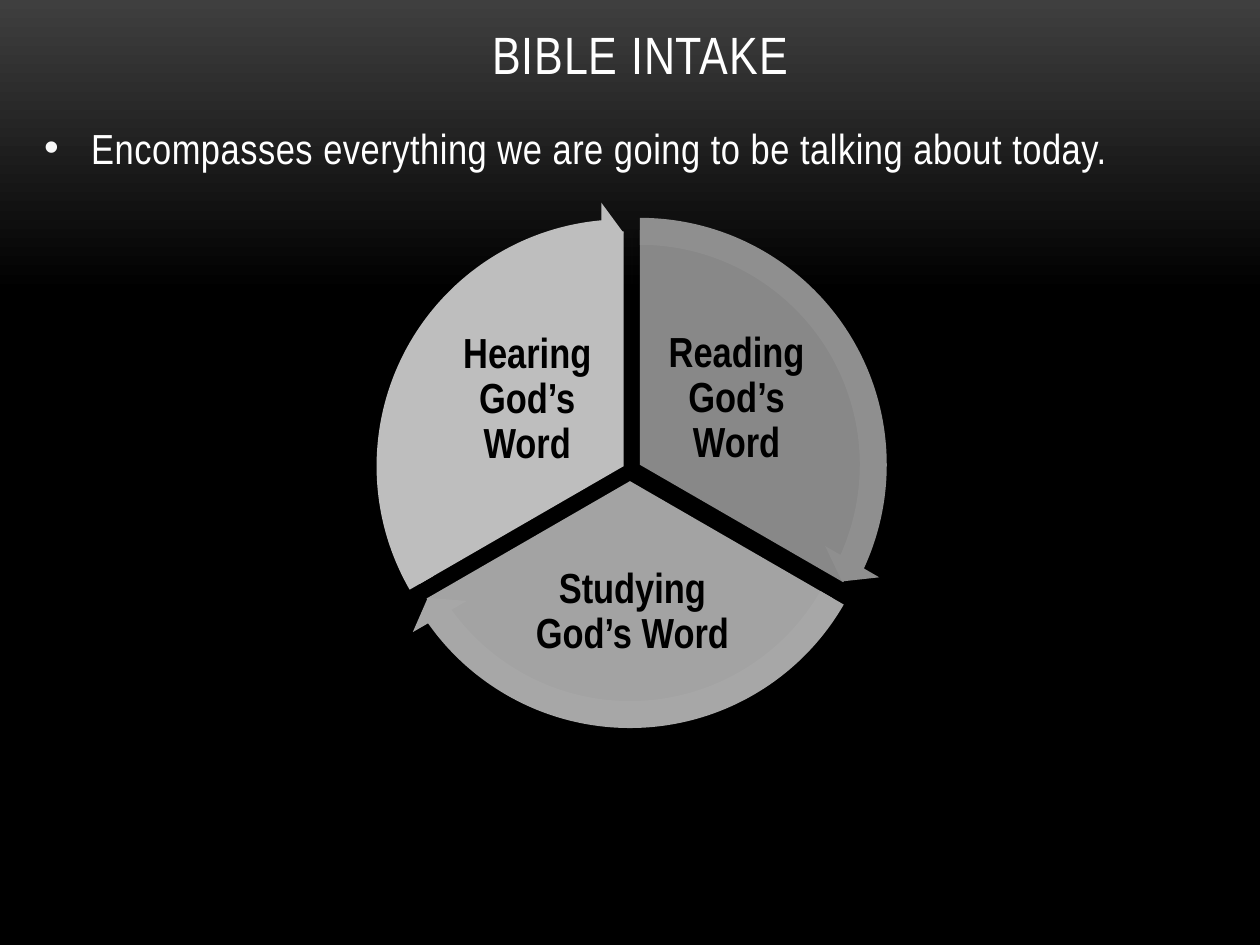
from dataclasses import dataclass

import lxml.etree
import pptx
import pptx.dml.color
import pptx.enum.shapes
import pptx.enum.text
import pptx.oxml
import pptx.oxml.ns
import pptx.util
from pptx.util import Cm

ALIGN = pptx.enum.text.PP_ALIGN
ANCHOR = pptx.enum.text.MSO_ANCHOR
SHAPE = pptx.enum.shapes.MSO_SHAPE


@dataclass(frozen=True)
class Theme:
    font: str = "Arial Narrow"
    title_size: int = 30
    text_size: int = 24
    light: str = "FFFFFF"
    dark: str = "000000"
    bullet: str = "F8F8F8"
    bg_top: str = "3F3F3F"


@dataclass(frozen=True)
class Sector:
    text: str
    center: tuple[float, float]
    start: int
    fill: str
    arrow_fill: str
    label_box: tuple[float, float, float, float]


THEME = Theme()
SWEEP = 120
PIE_SIZE = 9.47
ARROW_SIZE = 10.67
ARROW_WIDTH = 0.051
HEAD_WIDTH = 0.059
HEAD_ANGLE = 5.46
ANGLE_UNIT = 0.6

SECTORS = [
    Sector("Reading God’s Word", (12.9, 9.37), 270, "888888", "8F8F8F",
           (13.16, 6.63, 3.38, 2.82)),
    Sector("Studying God’s Word", (12.7, 9.7), 30, "A3A3A3", "A7A7A7",
           (10.21, 11.1, 5.08, 2.49)),
    Sector("Hearing God’s Word", (12.57, 9.4), 150, "BEBEBE", "BEBEBE",
           (8.94, 6.65, 3.38, 2.82)),
]


def rgb(color: str) -> pptx.dml.color.RGBColor:
    return pptx.dml.color.RGBColor.from_string(color)


def add_bullet(p, color: str, indent: float) -> None:
    pPr = p._p.get_or_add_pPr()
    pPr.set("marL", str(Cm(indent)))
    pPr.set("indent", str(-Cm(indent)))
    bu_clr = lxml.etree.SubElement(pPr, pptx.oxml.ns.qn("a:buClr"))
    lxml.etree.SubElement(bu_clr, pptx.oxml.ns.qn("a:srgbClr"), val=color)
    lxml.etree.SubElement(pPr, pptx.oxml.ns.qn("a:buFont"), typeface="Arial")
    lxml.etree.SubElement(pPr, pptx.oxml.ns.qn("a:buChar"), char="•")


def add_text(shapes, text: str, box: tuple[float, float, float, float], *,
             size: int = THEME.text_size, color: str = THEME.light,
             bold: bool = False, align=ALIGN.LEFT, anchor=ANCHOR.TOP,
             inset: float | None = None, line_spacing: float | None = None,
             tracking: float = 0, bullet_indent: float | None = None):
    sp = shapes.add_textbox(*map(Cm, box))
    tf = sp.text_frame
    tf.word_wrap = True
    tf.vertical_anchor = anchor
    if inset is not None:
        tf.margin_left = tf.margin_right = Cm(inset)
        tf.margin_top = tf.margin_bottom = Cm(inset)
    p = tf.paragraphs[0]
    if bullet_indent is not None:
        add_bullet(p, THEME.bullet, bullet_indent)
    p.alignment = align
    if line_spacing is not None:
        p.line_spacing = line_spacing
    r = p.add_run()
    r.text = text
    r.font.name = THEME.font
    r.font.size = pptx.util.Pt(size)
    r.font.bold = bold
    r.font.color.rgb = rgb(color)
    if tracking:
        r._r.get_or_add_rPr().set("spc", str(round(tracking * 100)))
    return sp


def add_round(shapes, kind, center: tuple[float, float], size: float,
              fill: str, adjustments: list[float]):
    left, top = (c - size / 2 for c in center)
    sp = shapes.add_shape(kind, Cm(left), Cm(top), Cm(size), Cm(size))
    for i, value in enumerate(adjustments):
        sp.adjustments[i] = value
    sp.fill.solid()
    sp.fill.fore_color.rgb = rgb(fill)
    sp.line.fill.background()
    sp.shadow.inherit = False
    return sp


def add_shadow(sp) -> None:
    effects = sp._element.spPr.find(pptx.oxml.ns.qn("a:effectLst"))
    effects.append(pptx.oxml.parse_xml(
        f'<a:outerShdw {pptx.oxml.ns.nsdecls("a")} blurRad="{pptx.util.Pt(4)}" '
        f'dist="{pptx.util.Pt(3.4)}" dir="5400000" rotWithShape="0">'
        f'<a:srgbClr val="{THEME.dark}"><a:alpha val="40000"/></a:srgbClr>'
        '</a:outerShdw>'))


def add_sector(shapes, s: Sector) -> None:
    end = (s.start + SWEEP) % 360
    sp = add_round(shapes, SHAPE.PIE, s.center, PIE_SIZE, s.fill,
                   [s.start * ANGLE_UNIT, end * ANGLE_UNIT])
    add_shadow(sp)
    add_text(shapes, s.text, s.label_box, color=THEME.dark, bold=True,
             align=ALIGN.CENTER, anchor=ANCHOR.MIDDLE, inset=0.08,
             line_spacing=0.9)


def add_arrow(shapes, s: Sector) -> None:
    end = (s.start + SWEEP) % 360 - HEAD_ANGLE
    add_round(shapes, SHAPE.CIRCULAR_ARROW, s.center, ARROW_SIZE, s.arrow_fill,
              [ARROW_WIDTH, HEAD_ANGLE * ANGLE_UNIT, end * ANGLE_UNIT,
               s.start * ANGLE_UNIT, HEAD_WIDTH])


def set_background(slide) -> None:
    fill = slide.background.fill
    fill.gradient()
    fill.gradient_angle = 270
    stops = ((0, THEME.bg_top), (0.31, THEME.dark))
    for stop, (position, color) in zip(fill.gradient_stops, stops):
        stop.position = position
        stop.color.rgb = rgb(color)


def main() -> None:
    prs = pptx.Presentation()
    prs.slide_width, prs.slide_height = Cm(25.4), Cm(19.05)
    slide = prs.slides.add_slide(prs.slide_layouts[6])
    set_background(slide)
    add_text(slide.shapes, "BIBLE INTAKE", (1.9, 0.43, 22.02, 1.4),
             size=THEME.title_size, align=ALIGN.CENTER, anchor=ANCHOR.BOTTOM,
             tracking=0.5)
    add_text(slide.shapes,
             "Encompasses everything we are going to be talking about today.",
             (0.64, 2.34, 24.33, 13.54), tracking=0.3, bullet_indent=0.95)
    cycle = slide.shapes.add_group_shape()
    for s in SECTORS:
        add_sector(cycle.shapes, s)
    for s in SECTORS:
        add_arrow(cycle.shapes, s)
    prs.save("out.pptx")


if __name__ == "__main__":
    main()
